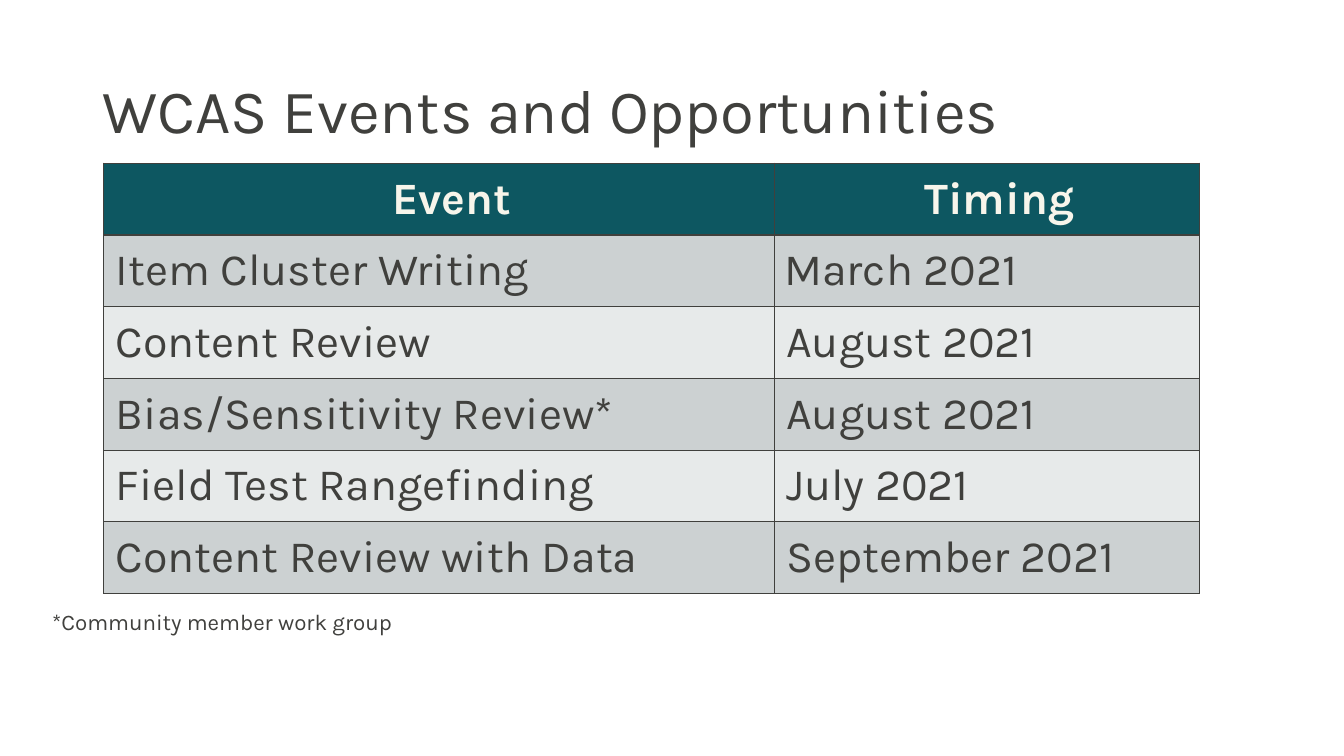
from lxml import etree
from pptx import Presentation
from pptx.dml.color import RGBColor
from pptx.enum import text
from pptx.oxml import ns
from pptx.util import Pt

INK = RGBColor(0x40, 0x40, 0x3D)
CREAM = RGBColor(0xF7, 0xF5, 0xEB)
TEAL = RGBColor(0x0D, 0x57, 0x61)
BANDS = RGBColor(0xE7, 0xEA, 0xEA), RGBColor(0xCC, 0xD1, 0xD2)
MID = text.MSO_ANCHOR.MIDDLE

# Left margin and first-line indent of paragraphs, in points
HEAD_IN, BODY_IN, HANG_IN = (36, -18), (1.44, 0), (18, -18)

ROWS = [
    ("Event", "Timing"),
    ("Item Cluster Writing", "March 2021"),
    ("Content Review", "August 2021"),
    ("Bias/Sensitivity Review*", "August 2021"),
    ("Field Test Rangefinding", "July 2021"),
    ("Content Review with Data", "September 2021"),
]
WIDTHS = 478.8, 303.84
ROW_H = 51.24


def style(para, words, size, color=INK, bold=False):
    run = para.add_run()
    run.text = words
    look = {"name": "Karla", "size": Pt(size), "bold": bold}
    for key, value in look.items():
        setattr(run.font, key, value)
    run.font.color.rgb = color


def add_text(slide, box, words, size, form):
    frame = slide.shapes.add_textbox(*map(Pt, box)).text_frame
    for key, value in form.items():
        setattr(frame, key, value)
    style(frame.paragraphs[0], words, size)
    return frame.paragraphs[0]


def add_edges(cell):
    props = cell._tc.get_or_add_tcPr()
    for spot, side in enumerate(("lnL", "lnR", "lnT", "lnB")):
        line = etree.Element(ns.qn("a:" + side), w=str(Pt(1)))
        fill = etree.SubElement(line, ns.qn("a:solidFill"))
        etree.SubElement(fill, ns.qn("a:srgbClr"), val=str(INK))
        props.insert(spot, line)


def fill_cell(cell, words, row, col):
    head = row == 0
    cell.vertical_anchor = MID
    cell.fill.solid()
    cell.fill.fore_color.rgb = TEAL if head else BANDS[row % 2]
    add_edges(cell)
    # Only the first date has a hanging indent
    left, first = HEAD_IN if head else HANG_IN if (row, col) == (1, 1) else BODY_IN
    para = cell.text_frame.paragraphs[0]
    props = para._p.get_or_add_pPr()
    props.set("marL", str(Pt(left)))
    props.set("indent", str(Pt(first)))
    para.alignment = text.PP_ALIGN.CENTER if head else text.PP_ALIGN.LEFT
    style(para, words, 32, CREAM if head else INK, head)


def add_grid(slide, left, top):
    box = left, top, sum(WIDTHS), ROW_H * len(ROWS)
    grid = slide.shapes.add_table(len(ROWS), len(WIDTHS), *map(Pt, box)).table
    for col, width in zip(grid.columns, WIDTHS):
        col.width = Pt(width)
    for row, words in enumerate(ROWS):
        grid.rows[row].height = Pt(ROW_H)
        for col, word in enumerate(words):
            fill_cell(grid.cell(row, col), word, row, col)


def main():
    deck = Presentation()
    deck.slide_width, deck.slide_height = Pt(960), Pt(540)
    slide = deck.slides.add_slide(deck.slide_layouts[6])

    # Title
    title = add_text(slide, (66.24, 28.8, 828, 104.4),
                     "WCAS Events and Opportunities", 44,
                     {"word_wrap": True, "vertical_anchor": MID})
    title.line_spacing = 0.9

    # Event table
    add_grid(slide, 74.16, 116.64)

    # Footnote
    add_text(slide, (30.24, 430.56, 612, 26.64),
             "*Community member work group", 16,
             {"word_wrap": True, "auto_size": text.MSO_AUTO_SIZE.SHAPE_TO_FIT_TEXT})

    deck.save("out.pptx")


if __name__ == "__main__":
    main()
